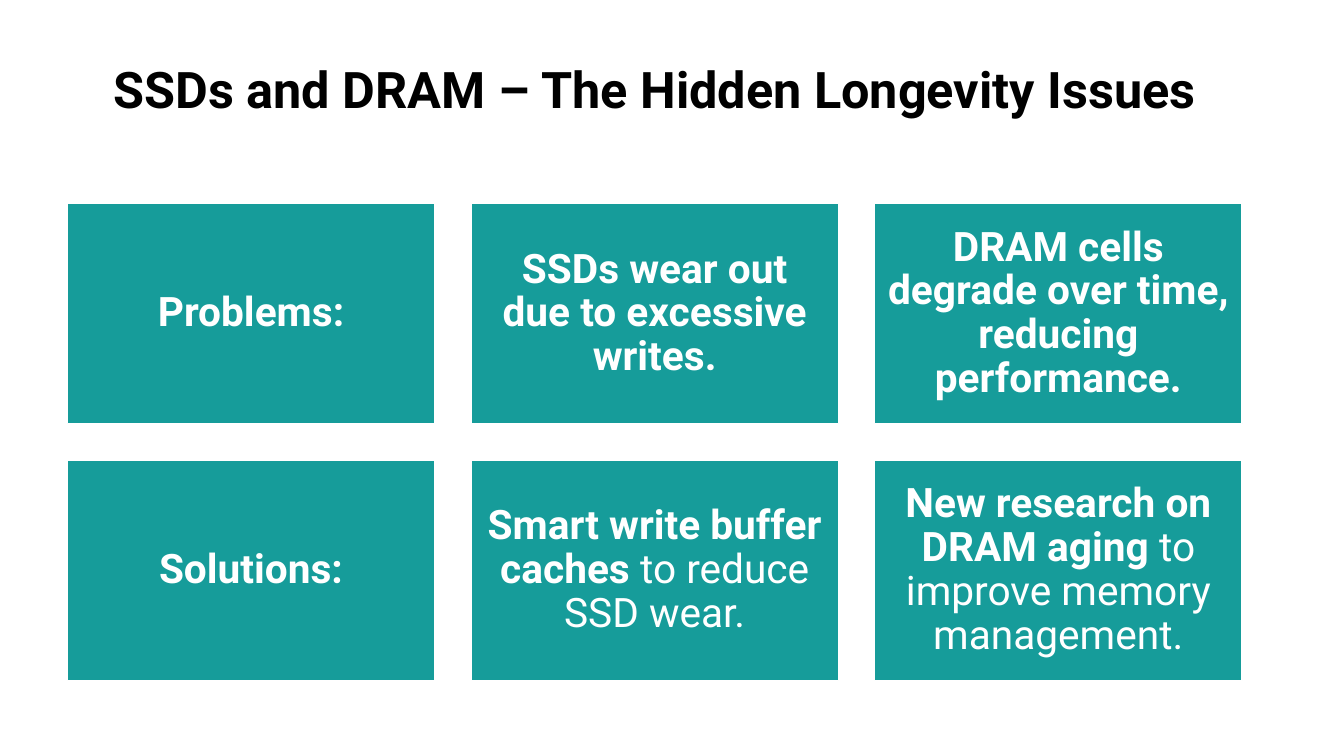
from dataclasses import dataclass

from pptx import Presentation
from pptx.dml.color import RGBColor
from pptx.enum import shapes, text
from pptx.util import Inches, Pt


@dataclass(frozen=True)
class Theme:
    font: str = "Roboto"
    ink: RGBColor = RGBColor(0x00, 0x00, 0x00)
    paper: RGBColor = RGBColor(0xFF, 0xFF, 0xFF)
    teal: RGBColor = RGBColor(0x16, 0x9C, 0x9A)
    title_size: int = 36
    card_size: int = 29
    line_spacing: float = 0.9


@dataclass(frozen=True)
class Box:
    left: float
    top: float
    width: float
    height: float

    def inches(self):
        return [Inches(n) for n in (self.left, self.top, self.width, self.height)]


THEME = Theme()
TITLE = "SSDs and DRAM – The Hidden Longevity Issues"
CARDS = [
    [
        [("Problems:", True)],
        [("SSDs wear out due to excessive writes.", True)],
        [("DRAM cells degrade over time, reducing performance.", True)],
    ],
    [
        [("Solutions:", True)],
        [("Smart write buffer caches", True), (" to reduce SSD wear.", False)],
        [("New research on DRAM aging", True), (" to improve memory management.", False)],
    ],
]


def write(frame, spans, size, color, anchor):
    frame.word_wrap = True
    frame.vertical_anchor = anchor
    para = frame.paragraphs[0]
    para.alignment = text.PP_ALIGN.CENTER
    para.line_spacing = THEME.line_spacing
    for words, bold in spans:
        span = para.add_run()
        span.text = words
        span.font.name = THEME.font
        span.font.size = Pt(size)
        span.font.bold = bold
        span.font.color.rgb = color


def add_title(page, box):
    title = page.shapes.add_textbox(*box.inches())
    write(title.text_frame, [(TITLE, True)], THEME.title_size, THEME.ink,
          text.MSO_ANCHOR.TOP)


def add_card(page, box, spans):
    card = page.shapes.add_shape(shapes.MSO_SHAPE.RECTANGLE, *box.inches())
    card.shadow.inherit = False
    card.fill.solid()
    card.fill.fore_color.rgb = THEME.teal
    card.line.color.rgb = THEME.paper
    card.line.width = Pt(1)
    frame = card.text_frame
    frame.margin_left = frame.margin_right = Inches(0.12)
    frame.margin_top = frame.margin_bottom = Inches(0.12)
    write(frame, spans, THEME.card_size, THEME.paper, text.MSO_ANCHOR.MIDDLE)


def add_card_grid(page, box, gap):
    rows, columns = len(CARDS), len(CARDS[0])
    width = (box.width - gap * (columns - 1)) / columns
    height = (box.height - gap * (rows - 1)) / rows
    for row, cards in enumerate(CARDS):
        for column, spans in enumerate(cards):
            left = box.left + column * (width + gap)
            top = box.top + row * (height + gap)
            add_card(page, Box(left, top, width, height), spans)


def main():
    deck = Presentation()
    deck.slide_width = Inches(13.33)
    deck.slide_height = Inches(7.5)
    page = deck.slides.add_slide(deck.slide_layouts[6])
    add_title(page, Box(0.67, 0.6, 11.65, 1.24))
    add_card_grid(page, Box(0.67, 2.02, 11.65, 4.73), gap=0.36)
    deck.save("out.pptx")


if __name__ == "__main__":
    main()
